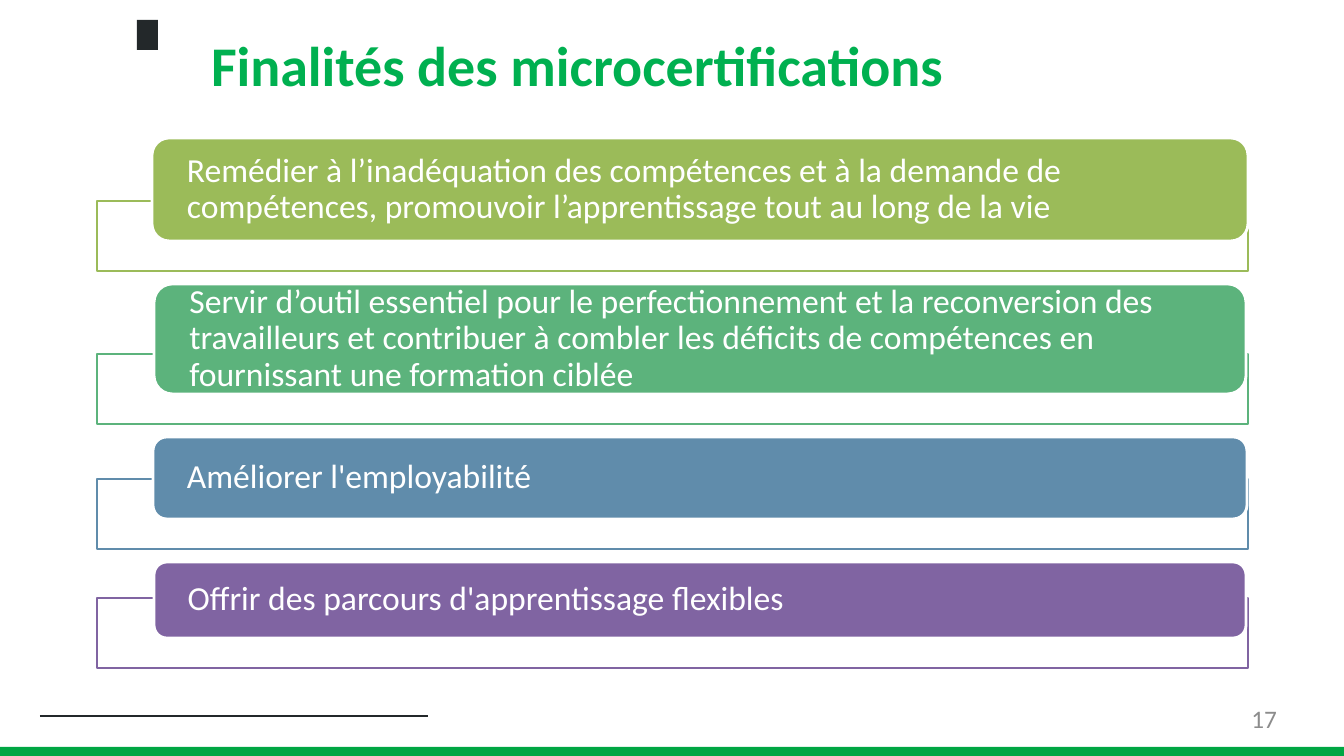
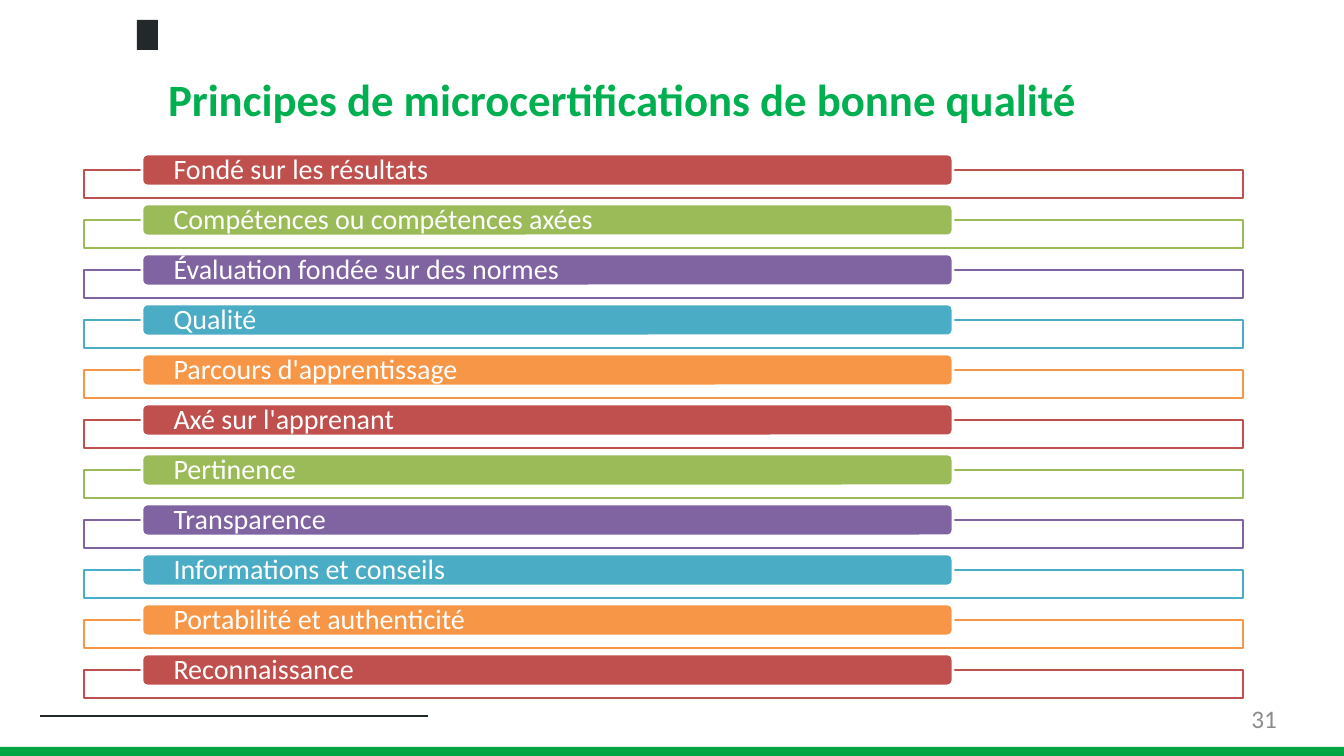
from dataclasses import dataclass

from lxml.etree import SubElement
from pptx import Presentation
from pptx.dml.color import RGBColor
from pptx.enum.shapes import MSO_CONNECTOR, MSO_SHAPE
from pptx.enum.text import MSO_ANCHOR as Anchor, MSO_AUTO_SIZE as AutoSize, PP_ALIGN as Align
from pptx.oxml.ns import qn
from pptx.util import Emu, Pt

PAGE_WIDTH, PAGE_HEIGHT = 1344, 756
TITLE_ONLY = 5


@dataclass(frozen=True)
class Theme:
    font: str = "Calibri"
    white: str = "FFFFFF"
    ink: str = "23282A"
    title: str = "00B050"
    band: str = "00A643"
    number: str = "8C8C8C"
    red: str = "C0504D"
    lime: str = "9BBB59"
    green: str = "5CB37C"
    blue: str = "608CAB"
    purple: str = "8064A2"
    aqua: str = "4BACC6"
    orange: str = "F79646"
    title_line: float = 51.6
    number_size: int = 18
    outline: int = 2
    rule: float = 1.5


THEME = Theme()


@dataclass(frozen=True)
class Stack:
    """Geometry of a column of labelled bars, each over an outlined frame."""
    top: int
    frame_left: int
    frame_width: int
    frame_height: int
    overlap: int  # how far a bar reaches down into its frame
    gap: int
    text_size: int


def px(length):
    return Emu(round(length * 914400 / 100.8))


def rgb(colour):
    return RGBColor.from_string(colour)


# Text
def add_span(para, text, size, colour, bold=False):
    span = para.add_run()
    span.text = text
    span.font.name = THEME.font
    span.font.size = Pt(size)
    span.font.bold = bold
    span.font.color.rgb = rgb(colour)


def set_margins(frame, left=0, right=0):
    frame.margin_left, frame.margin_right = px(left), px(right)
    frame.margin_top = frame.margin_bottom = 0
    frame.word_wrap = True


def set_title(page, text, area, size):
    title = page.shapes.title
    title.left, title.top, title.width, title.height = map(px, area)
    frame = title.text_frame
    set_margins(frame, left=9)
    frame.vertical_anchor = Anchor.TOP
    frame.auto_size = AutoSize.SHAPE_TO_FIT_TEXT
    para = frame.paragraphs[0]
    para.alignment = Align.LEFT
    para.line_spacing = Pt(THEME.title_line)
    add_span(para, text, size, THEME.title, bold=True)


# Shapes
def add_block(page, kind, area, fill, line=None):
    block = page.shapes.add_shape(kind, *map(px, area))
    block.shadow.inherit = False
    block.fill.solid()
    block.fill.fore_color.rgb = rgb(fill)
    if line:
        block.line.color.rgb = rgb(line)
        block.line.width = Pt(THEME.outline)
    else:
        block.line.fill.background()
    return block


def add_rule(page, left, right, y):
    rule = page.shapes.add_connector(
        MSO_CONNECTOR.STRAIGHT, px(left), px(y), px(right), px(y))
    rule.line.color.rgb = rgb(THEME.ink)
    rule.line.width = Pt(THEME.rule)
    SubElement(rule.element.spPr, qn("a:effectLst"))


def add_bar(page, area, text, size, colour):
    bar = add_block(page, MSO_SHAPE.ROUNDED_RECTANGLE, area, colour, THEME.white)
    frame = bar.text_frame
    set_margins(frame, left=30, right=30)
    frame.vertical_anchor = Anchor.MIDDLE
    para = frame.paragraphs[0]
    para.alignment = Align.LEFT
    para.line_spacing = 0.9
    add_span(para, text, size, THEME.white)


def add_stack(page, stack, rows):
    """Rows hold text, colour, bar left, bar width and bar height."""
    top = stack.top
    for text, colour, left, width, height in rows:
        frame_top = top + height - stack.overlap
        add_block(page, MSO_SHAPE.RECTANGLE,
                  (stack.frame_left, frame_top, stack.frame_width, stack.frame_height),
                  THEME.white, colour)
        add_bar(page, (left, top, width, height), text, stack.text_size, colour)
        top = frame_top + stack.frame_height + stack.gap


# Page with the shared mark, rule, band and number
def add_page(deck, number, title, title_area, title_size):
    page = deck.slides.add_slide(deck.slide_layouts[TITLE_ONLY])
    add_rule(page, 40, 428, 716)
    add_block(page, MSO_SHAPE.RECTANGLE, (137, 20, 21, 30), THEME.ink)
    add_block(page, MSO_SHAPE.RECTANGLE, (0, 747, PAGE_WIDTH, 9), THEME.band)
    set_title(page, title, title_area, title_size)
    box = page.shapes.add_textbox(*map(px, (968, 703, 309, 38)))
    set_margins(box.text_frame)
    para = box.text_frame.paragraphs[0]
    para.alignment = Align.RIGHT
    add_span(para, number, THEME.number_size, THEME.number)
    return page


def add_purposes(deck):
    page = add_page(deck, "17", "Finalités des microcertifications",
                    (202, 25, 1062, 71), 40)
    stack = Stack(top=138, frame_left=97, frame_width=1151, frame_height=70,
                  overlap=40, gap=13, text_size=24)
    add_stack(page, stack, [
        ("Remédier à l’inadéquation des compétences et à la demande de "
         "compétences, promouvoir l’apprentissage tout au long de la vie",
         THEME.lime, 152, 1096, 103),
        ("Servir d’outil essentiel pour le perfectionnement et la reconversion des "
         "travailleurs et contribuer à combler les déficits de compétences en "
         "fournissant une formation ciblée",
         THEME.green, 154, 1092, 110),
        ("Améliorer l'employabilité", THEME.blue, 153, 1094, 82),
        ("Offrir des parcours d'apprentissage flexibles", THEME.purple, 154, 1092, 76),
    ])


def add_principles(deck):
    page = add_page(deck, "31", "Principes de microcertifications de bonne qualité",
                    (159, 53, 1025, 68), 32)
    stack = Stack(top=154, frame_left=84, frame_width=1159, frame_height=28,
                  overlap=16, gap=6, text_size=20)
    colours = (THEME.red, THEME.lime, THEME.purple, THEME.aqua, THEME.orange)
    principles = (
        "Fondé sur les résultats",
        "Compétences ou compétences axées",
        "Évaluation fondée sur des normes",
        "Qualité",
        "Parcours d'apprentissage",
        "Axé sur l'apprenant",
        "Pertinence",
        "Transparence",
        "Informations et conseils",
        "Portabilité et authenticité",
        "Reconnaissance",
    )
    add_stack(page, stack, [
        (text, colours[index % len(colours)], 142, 811, 32)
        for index, text in enumerate(principles)])


def main():
    deck = Presentation()
    deck.slide_width, deck.slide_height = px(PAGE_WIDTH), px(PAGE_HEIGHT)
    add_purposes(deck)
    add_principles(deck)
    deck.save("out.pptx")


if __name__ == "__main__":
    main()
